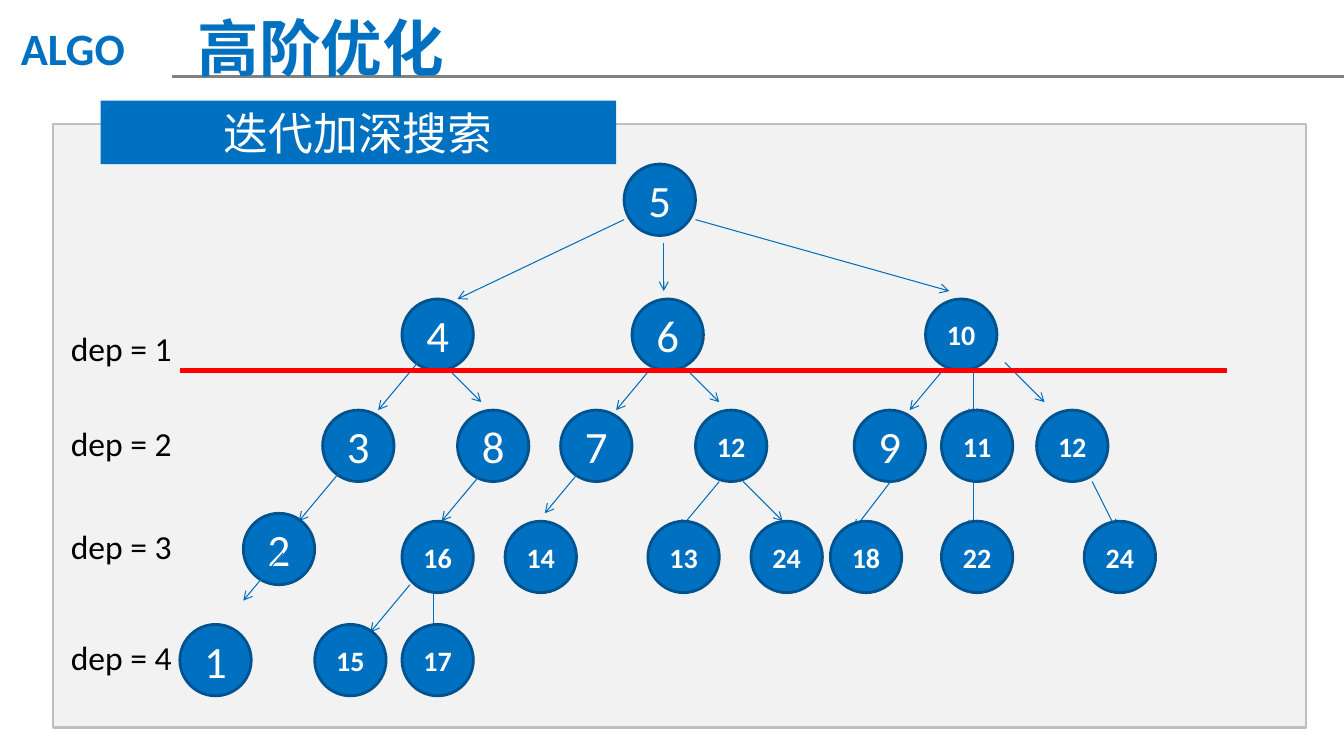
"""Build the slide on iterative deepening search as a tree on a 2 mm grid."""
import pptx
import pptx.util
import pptx.dml.color
import pptx.enum.shapes
import pptx.enum.text
import pptx.oxml.ns
import lxml.etree

Pt = pptx.util.Pt
Shape = pptx.enum.shapes.MSO_SHAPE
Anchor = pptx.enum.text.MSO_ANCHOR
Align = pptx.enum.text.PP_ALIGN
name = pptx.oxml.ns.qn
cell = pptx.util.Mm(2)
edge = pptx.util.Inches(0.053)
BLUE, LINK, RED, GRAY = "0070C0", "006EBC", "FF0000", "808080"
SANS = "Noto Sans CJK SC"

deck = pptx.Presentation()
deck.slide_width = pptx.util.Inches(13.34)
deck.slide_height = pptx.util.Inches(7.5)
slide = deck.slides.add_slide(deck.slide_layouts[6])
parts = slide.shapes


def hue(code):
    return pptx.dml.color.RGBColor.from_string(code)


def write(text, box, shape=None, fill=BLUE, rim=None, width=1.5, size=24,
          font="Calibri", color="000000", bold=False):
    left, top, wide, high = box
    place = [int(edge + cell * left), int(edge + cell * top), int(cell * wide), int(cell * high)]
    if shape is None:
        item = parts.add_textbox(*place)
    else:
        item = parts.add_shape(shape, *place)
        item.shadow.inherit = False
        item.fill.solid()
        item.fill.fore_color.rgb = hue(fill)
        if rim:
            item.line.color.rgb = hue(rim)
            item.line.width = Pt(width)
        else:
            item.line.fill.background()
    if text:
        frame = item.text_frame
        frame.word_wrap = True
        frame.vertical_anchor = Anchor.TOP if shape is None else Anchor.MIDDLE
        para = frame.paragraphs[0]
        para.alignment = Align.LEFT if shape is None else Align.CENTER
        run = para.add_run()
        run.text = text
        run.font.size, run.font.name, run.font.bold = Pt(size), font, bold
        run.font.color.rgb = hue(color)
        lxml.etree.SubElement(run.font._element, name("a:ea"), typeface=font)


write("", (6, 15, 158, 76), Shape.RECTANGLE, "F2F2F2", "BFBFBF")
write("迭代加深搜索", (12, 12, 65, 8), Shape.RECTANGLE, size=32, font=SANS, color="FFFFFF")

layers = [
    (GRAY, 2, [(21, 9, 168.75, 9)], [(5, 78, 20)]),
    (LINK, 0.75, [(78, 27, 57, 37), (83, 30, 83, 36), (87, 27, 119, 36)],
     [(4, 50, 37), (6, 79, 37), (10, 116, 37)]),
    (LINK, 0.75,
     [(52, 45, 47, 51), (55, 45, 60, 50), (82, 45, 77, 51), (85, 45, 90, 50),
      (119, 45, 114, 51), (126, 45, 131, 50), (122, 46, 122, 52)],
     [(3, 40, 51), (8, 57, 51), (7, 70, 51), (12, 87, 51),
      (9, 107, 51), (12, 130, 51), (11, 118, 51)]),
    (LINK, 0.75,
     [(42, 59, 37, 65), (60, 59, 55, 65), (73, 58, 68, 64), (90, 60, 85, 66),
      (93, 60, 98, 65), (111.6, 60, 107, 66), (122, 60, 122, 66), (137, 60, 140, 66)],
     [(2, 30, 64), (16, 50, 65), (14, 63, 65), (13, 81, 65),
      (24, 94, 65), (18, 104, 65), (22, 118, 65), (24, 136, 65)]),
    (LINK, 0.75, [(35, 69, 30, 75), (51, 73, 46, 79), (54, 74, 54, 80)],
     [(1, 22, 78), (15, 39, 78), (17, 50, 78)]),
    (RED, 3, [(22, 46, 154, 46)], []),
]
for color, width, lines, nodes in layers:
    for ends in lines:
        spots = [int(edge + cell * n) for n in ends]
        line = parts.add_connector(pptx.enum.shapes.MSO_CONNECTOR.STRAIGHT, *spots)
        line.line.color.rgb = hue(color)
        line.line.width = Pt(width)
        props = line._element.spPr
        if color == LINK:
            lxml.etree.SubElement(props.find(name("a:ln")), name("a:tailEnd"), type="arrow")
        lxml.etree.SubElement(props, name("a:effectLst"))
    for value, col, row in nodes:
        long = value > 9
        write(str(value), (col, row, 9, 9), Shape.OVAL, rim="00538E", width=2,
              size=20 if long else 32, color="FFFFFF", bold=long)

write("ALGO", (0.7, 1.3, 24, 9.4), size=32, color=BLUE, bold=True)
write("高阶优化", (23, 0, 60, 10.7), size=44, font=SANS, color=BLUE, bold=True)
for depth, row in enumerate((40, 52, 65, 79), 1):
    write(f"dep = {depth}", (7, row, 17, 6.4))

deck.save("out.pptx")
